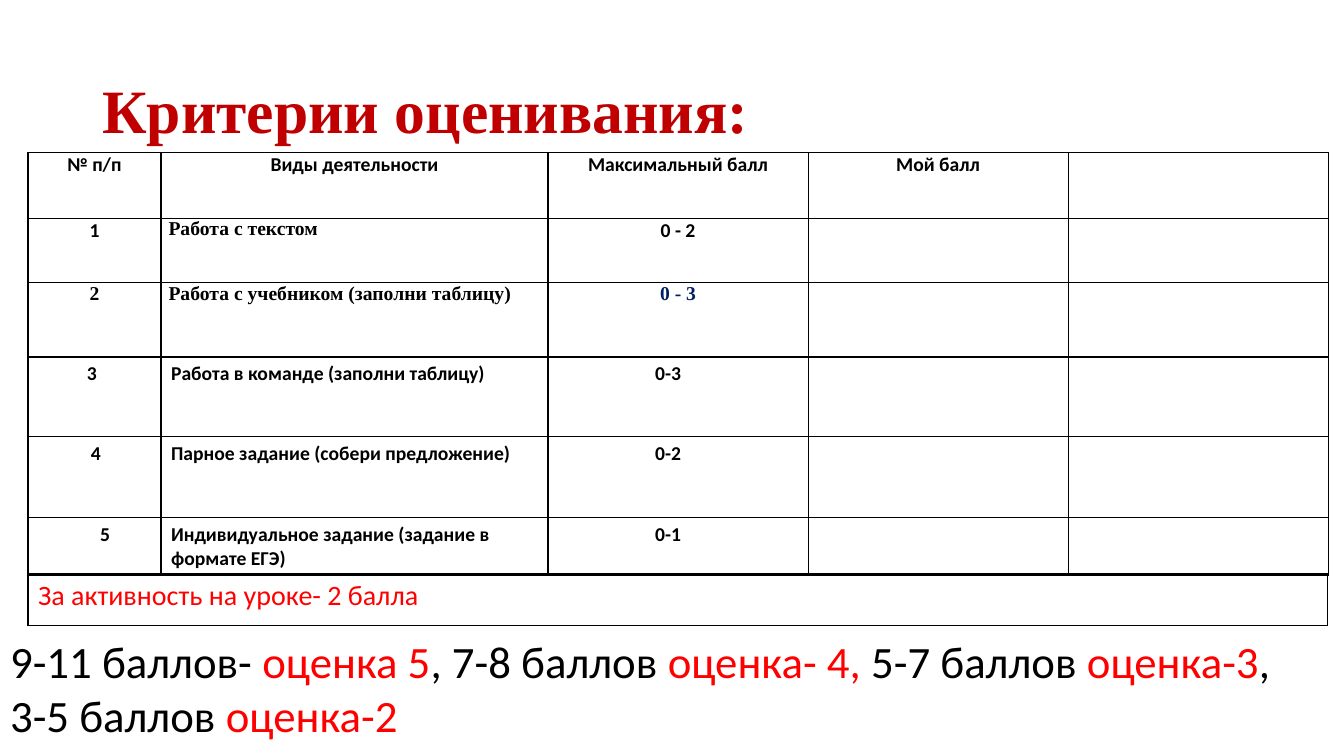
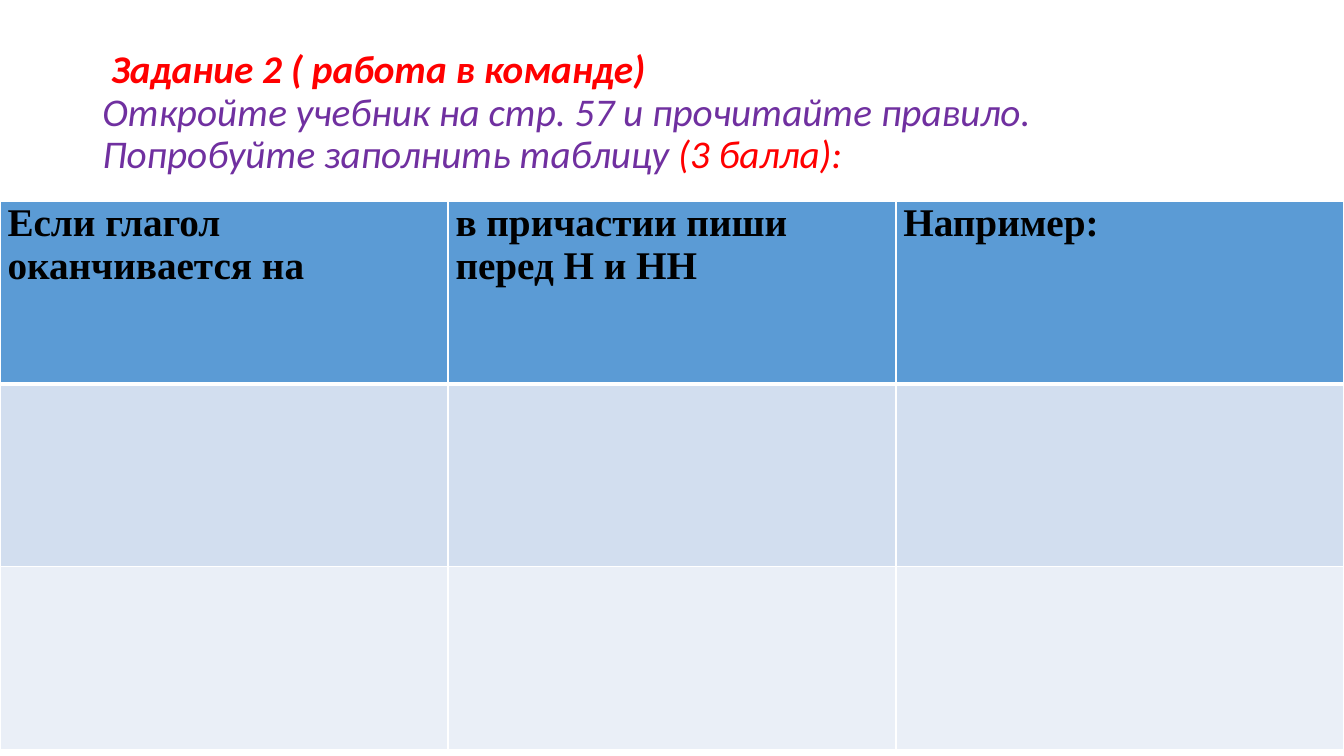
from lxml import etree
from pptx import Presentation
from pptx.dml.color import RGBColor
from pptx.enum.text import MSO_ANCHOR, PP_ALIGN
from pptx.oxml.ns import qn
from pptx.util import Pt

LEFT, CENTER = PP_ALIGN.LEFT, PP_ALIGN.CENTER
MIDDLE, BOTTOM = MSO_ANCHOR.MIDDLE, MSO_ANCHOR.BOTTOM

SANS, SERIF = "Calibri", "Times New Roman"
BLACK, WHITE, RED, CRIMSON = "000000", "FFFFFF", "FF0000", "C00000"
PURPLE, NAVY = "7030A0", "002060"
HEADER_BLUE, BAND_DARK, BAND_LIGHT = "5B9BD5", "D2DEEF", "EAEFF7"
TIGHT = (5.4, 0)
ROOMY = (7.2, 3.6)


def rgb(value):
    return RGBColor.from_string(value)


class Deck:
    """Shared style and the slide being built."""

    def __init__(self):
        self.prs = Presentation()
        self.prs.slide_width, self.prs.slide_height = Pt(960), Pt(540)
        self.s = None

    def slide(self):
        self.s = self.prs.slides.add_slide(self.prs.slide_layouts[6])

    def run(self, p, text, size, color=BLACK, font=SANS, bold=False, italic=False):
        r = p.add_run()
        r.text = text
        r.font.name, r.font.size = font, Pt(size)
        r.font.bold, r.font.italic = bold, italic
        r.font.color.rgb = rgb(color)

    def rich(self, tf, paragraphs, size, spacing=1.0, **style):
        for i, runs in enumerate(paragraphs):
            p = tf.add_paragraph() if i else tf.paragraphs[0]
            p.line_spacing = spacing
            for text, color, *bold in runs:
                self.run(p, text, size, color, bold=bool(bold), **style)

    def title(self, paragraphs, size, **style):
        tf = self.s.shapes.add_textbox(Pt(66), Pt(28.75), Pt(828), Pt(104.5)).text_frame
        tf.word_wrap = True
        tf.vertical_anchor = MIDDLE
        self.rich(tf, paragraphs, size, 0.9, **style)

    def table(self, x, y, widths, heights, line=None, fills=None, header_line=1):
        shape = self.s.shapes.add_table(len(heights), len(widths), Pt(x), Pt(y),
                                        Pt(sum(widths)), Pt(sum(heights)))
        tbl = shape.table
        tbl.first_row = tbl.horz_banding = False
        for col, w in zip(tbl.columns, widths):
            col.width = Pt(w)
        for i, (row, h) in enumerate(zip(tbl.rows, heights)):
            row.height = Pt(h)
            top = header_line if i == 1 else 1
            bottom = header_line if i == 0 else 1
            for cell in row.cells:
                self.borders(cell, line, {"L": 1, "R": 1, "T": top, "B": bottom})
                if fills:
                    cell.fill.solid()
                    cell.fill.fore_color.rgb = rgb(fills[i])
                else:
                    cell.fill.background()
        return tbl

    def borders(self, cell, color, widths):
        tcPr = cell._tc.get_or_add_tcPr()
        for side, width in widths.items():
            ln = etree.SubElement(tcPr, qn(f"a:ln{side}"), w=str(Pt(width)))
            if color:
                fill = etree.SubElement(ln, qn("a:solidFill"))
                etree.SubElement(fill, qn("a:srgbClr"), val=color)
            else:
                etree.SubElement(ln, qn("a:noFill"))

    def cell(self, cell, text, size, inset=ROOMY, align=LEFT, indent=None, after=0, **style):
        dx, dy = inset
        cell.margin_left = Pt(dx if indent is None else indent)
        cell.margin_right = Pt(dx)
        cell.margin_top = cell.margin_bottom = Pt(dy)
        p = cell.text_frame.paragraphs[0]
        p.alignment = align
        p.space_after = Pt(after)
        self.run(p, text, size, **style)


def criteria_slide(deck):
    deck.slide()
    deck.title([[("Критерии оценивания:", CRIMSON, True)]], 44, font=SERIF)

    grades = deck.table(0, 144.75, [949], [391]).cell(0, 0)
    grades.vertical_anchor = BOTTOM
    deck.rich(grades.text_frame, [
        [("9-11 баллов- ", BLACK), ("оценка 5", RED), (", 7-8 баллов ", BLACK),
         ("оценка- 4, ", RED), ("5-7 баллов ", BLACK), ("оценка-3", RED), (",", BLACK)],
        [("3-5 баллов ", BLACK), ("оценка-2", RED)],
    ], 32)

    tbl = deck.table(20, 109, [95, 276.5, 185.75, 185.75, 185.75],
                     [47, 46, 53, 57, 58, 41], BLACK)
    centered = {"inset": TIGHT, "align": CENTER}
    activity = {"inset": TIGHT, "font": SERIF}
    score = {"indent": 76.5}
    rows = [
        [(name, centered) for name in
         ("№ п/п", "Виды деятельности", "Максимальный балл", "Мой балл")],
        [("1", centered), ("Работа с текстом", activity), ("0 - 2", centered)],
        [("2", {**centered, "font": SERIF}),
         ("Работа с учебником (заполни таблицу)", activity),
         ("0 - 3", {**centered, "font": SERIF, "color": NAVY})],
        [("3", {"indent": 42}), ("Работа в команде (заполни таблицу)", {}), ("0-3", score)],
        [("4", {"indent": 45}), ("Парное задание (собери предложение)", {}), ("0-2", score)],
        [("5", {"indent": 51.5}),
         ("Индивидуальное задание (задание в формате ЕГЭ)", {}), ("0-1", score)],
    ]
    for i, row in enumerate(rows):
        for j, (text, style) in enumerate(row):
            deck.cell(tbl.cell(i, j), text, 14, bold=True, **style)

    bonus = deck.table(20, 410, [928], [37], BLACK)
    deck.cell(bonus.cell(0, 0), "За активность на уроке- 2 балла", 20, color=RED)


def task_slide(deck):
    deck.slide()
    deck.title([
        [(" Задание 2 ( работа в команде)", RED, True)],
        [("Откройте учебник на стр. 57 и прочитайте правило. "
          "Попробуйте заполнить таблицу ", PURPLE), ("(3 балла):", RED)],
    ], 28, italic=True)

    tbl = deck.table(0, 144, [320] * 3, [130.4] * 3, WHITE,
                     [HEADER_BLUE, BAND_DARK, BAND_LIGHT], header_line=3)
    headers = ("Если глагол оканчивается на", "в причастии пиши перед Н и НН", "Например:")
    for j, text in enumerate(headers):
        deck.cell(tbl.cell(0, j), text, 28, TIGHT, after=7.5, font=SERIF, bold=True)


def main():
    deck = Deck()
    criteria_slide(deck)
    task_slide(deck)
    deck.prs.save("out.pptx")


if __name__ == "__main__":
    main()
